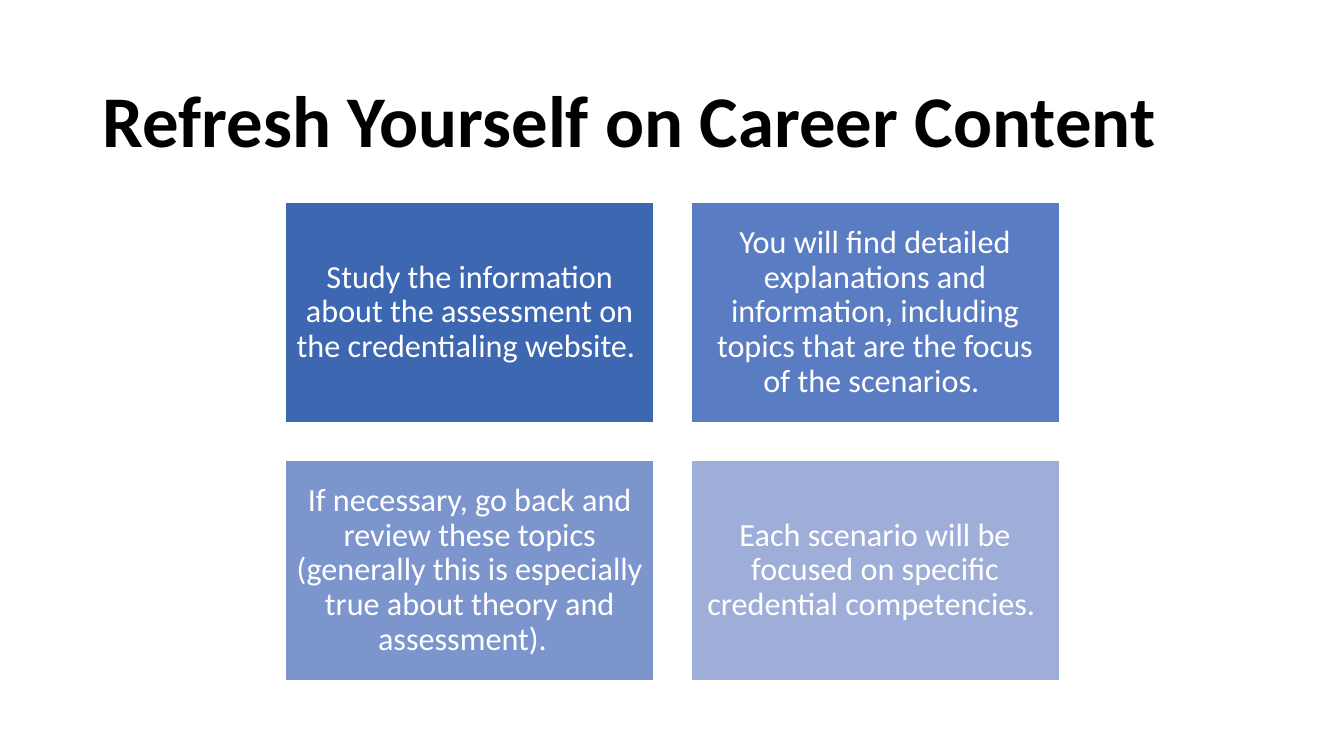
from pptx import Presentation
from pptx.dml.color import RGBColor
from pptx.enum import shapes, text
from pptx.util import Cm, Pt

COLORS = {
    "title": "000000",
    "light": "FFFFFF",
    "study": "3E67B2",
    "topics": "5A7CC3",
    "review": "7D95CD",
    "scenario": "9FAED8",
}

CARDS = [
    ("study", "Study the information about the assessment on the credentialing website.  "),
    ("topics", "You will find detailed explanations and information, including topics that are the focus of the scenarios. "),
    ("review", "If necessary, go back and review these topics (generally this is especially true about theory and assessment).  "),
    ("scenario", "Each scenario will be focused on specific credential competencies. "),
]


def rgb(name):
    """Return the palette colour with this name."""
    return RGBColor.from_string(COLORS[name])


def format_text(tf, words, size, color, align, bold=False):
    """Fill a text frame with one middle-anchored Calibri paragraph."""
    tf.word_wrap = True
    tf.auto_size = text.MSO_AUTO_SIZE.NONE
    tf.vertical_anchor = text.MSO_ANCHOR.MIDDLE
    p = tf.paragraphs[0]
    p.text = words
    p.alignment = align
    p.line_spacing = 0.9
    p.font.name = "Calibri"
    p.font.size = Pt(size)
    p.font.bold = bold
    p.font.color.rgb = rgb(color)


def place_title(s, left, top, width, height):
    """Move and format the title placeholder within its box."""
    sp = s.shapes.title
    sp.left, sp.top, sp.width, sp.height = left, top, width, height
    format_text(sp.text_frame, "Refresh Yourself on Career Content", 52,
                "title", text.PP_ALIGN.LEFT, bold=True)


def add_card(s, left, top, width, height, fill, words):
    """Draw one coloured card with centred text."""
    sp = s.shapes.add_shape(shapes.MSO_SHAPE.RECTANGLE, left, top, width, height)
    sp.shadow.inherit = False
    sp.fill.solid()
    sp.fill.fore_color.rgb = rgb(fill)
    sp.line.color.rgb = rgb("light")
    sp.line.width = Pt(1)
    tf = sp.text_frame
    tf.margin_left = tf.margin_right = tf.margin_top = tf.margin_bottom = Cm(0.24)
    format_text(tf, words, 23, "light", text.PP_ALIGN.CENTER)


def add_card_grid(s, left, top, width, height, gap, columns=2):
    """Lay the cards out in equal columns and rows inside a box."""
    rows = -(-len(CARDS) // columns)
    card_w = (width - gap * (columns - 1)) // columns
    card_h = (height - gap * (rows - 1)) // rows
    for i, (fill, words) in enumerate(CARDS):
        row, col = divmod(i, columns)
        add_card(s, left + col * (card_w + gap), top + row * (card_h + gap),
                 card_w, card_h, fill, words)


def main():
    """Build and save the slide."""
    prs = Presentation()
    prs.slide_width, prs.slide_height = Cm(33.87), Cm(19.05)
    s = prs.slides.add_slide(prs.slide_layouts[5])
    place_title(s, Cm(2.33), Cm(1.55), Cm(29.21), Cm(3.15))
    add_card_grid(s, Cm(7.2), Cm(5.09), Cm(19.5), Cm(12.07), Cm(0.93))
    prs.save("out.pptx")


if __name__ == "__main__":
    main()
